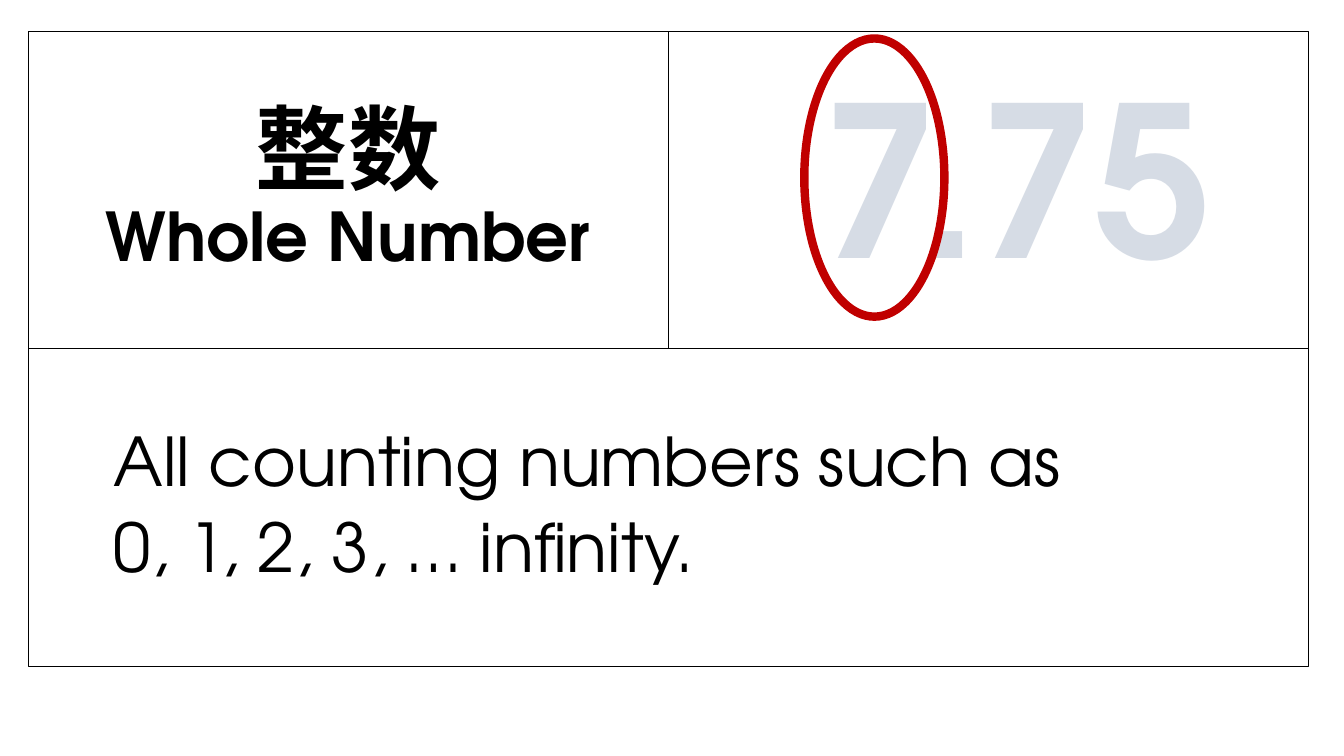
"""Build a vocabulary card slide for the term "Whole Number"."""
from lxml import etree
from pptx import Presentation
from pptx import util as u
from pptx.dml.color import RGBColor
from pptx.enum import shapes, text
from pptx.oxml.ns import qn

COLORS = {"ink": "000000", "digits": "D6DCE5", "ring": "C00000"}
SANS = "TeX Gyre Adventor"
LEFT, TOP, CELL_W, CELL_H = 0.71, 0.79, 16.13, 8.0


def rgb(name):
    return RGBColor.from_string(COLORS[name])


def outline(sp, color, width):
    sp.fill.background()
    sp.line.color.rgb = rgb(color)
    sp.line.width = u.Pt(width)


def place_cell(sp, col, row, span=1):
    sp.left, sp.top = u.Cm(LEFT + col * CELL_W), u.Cm(TOP + row * CELL_H)
    sp.width, sp.height = u.Cm(span * CELL_W), u.Cm(CELL_H)
    outline(sp, "ink", 0.75)
    tf = sp.text_frame
    tf.word_wrap = True
    tf.auto_size = text.MSO_AUTO_SIZE.NONE
    tf.vertical_anchor = text.MSO_ANCHOR.MIDDLE
    return tf


def format_paragraph(p, align, indent=0, before=0):
    pPr = p._p.get_or_add_pPr()
    pPr.set("marL", str(u.Cm(indent)))
    pPr.set("indent", "0")
    etree.SubElement(pPr, qn("a:buNone"))
    p.alignment = align
    p.line_spacing = 0.9
    p.space_before = u.Pt(before)


def add_run(p, words, size, font=SANS, color="ink", bold=False):
    r = p.add_run()
    r.text = words
    r.font.size = u.Pt(size)
    r.font.name = font
    r.font.bold = bold
    r.font.color.rgb = rgb(color)


def add_term(sp):
    p = place_cell(sp, 0, 0).paragraphs[0]
    format_paragraph(p, text.PP_ALIGN.CENTER)
    add_run(p, "整数", 66, font="Calibri", bold=True)
    p.add_line_break()
    add_run(p, "Whole Number", 48, bold=True)


def add_example(sp):
    p = place_cell(sp, 1, 0).paragraphs[0]
    format_paragraph(p, text.PP_ALIGN.CENTER, indent=1.47)
    add_run(p, "7.75", 150, color="digits", bold=True)


def add_definition(sp, lines):
    tf = place_cell(sp, 0, 1, span=2)
    for i, line in enumerate(lines):
        p = tf.add_paragraph() if i else tf.paragraphs[0]
        format_paragraph(p, text.PP_ALIGN.LEFT, indent=1.9, before=10 if i else 0)
        add_run(p, line, 48)


def add_ring(s, left, top, width, height):
    sp = s.shapes.add_shape(shapes.MSO_SHAPE.OVAL, u.Cm(left), u.Cm(top),
                            u.Cm(width), u.Cm(height))
    sp.shadow.inherit = False
    outline(sp, "ring", 6)


def main():
    prs = Presentation()
    prs.slide_width, prs.slide_height = u.Cm(33.87), u.Cm(19.05)
    s = prs.slides.add_slide(prs.slide_layouts[3])
    term, example, definition = s.placeholders
    add_term(term)
    add_example(example)
    add_definition(definition, ["All counting numbers such as",
                                "0, 1, 2, 3, … infinity."])
    add_ring(s, 20.27, 0.97, 3.53, 7.01)
    prs.save("out.pptx")


if __name__ == "__main__":
    main()
